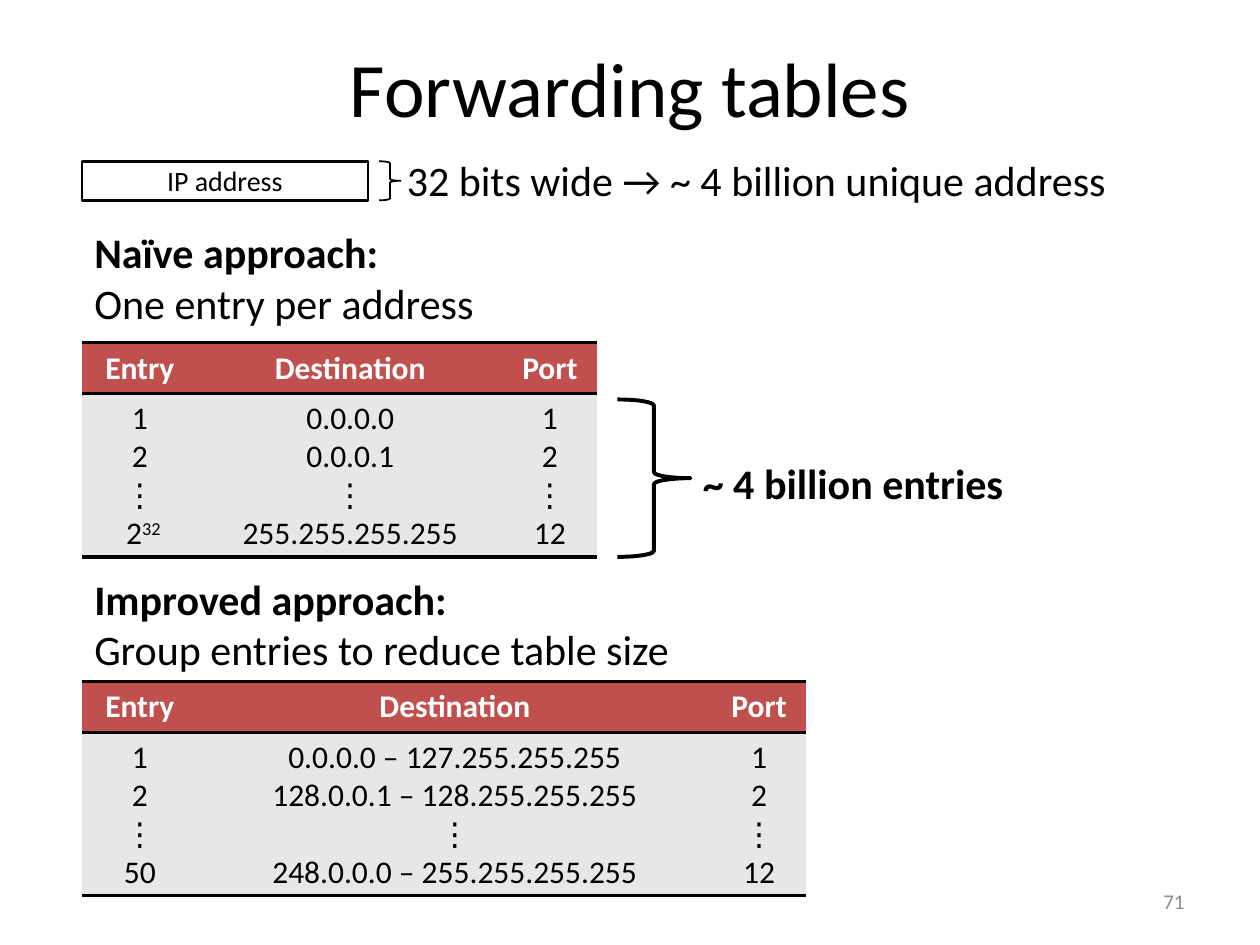
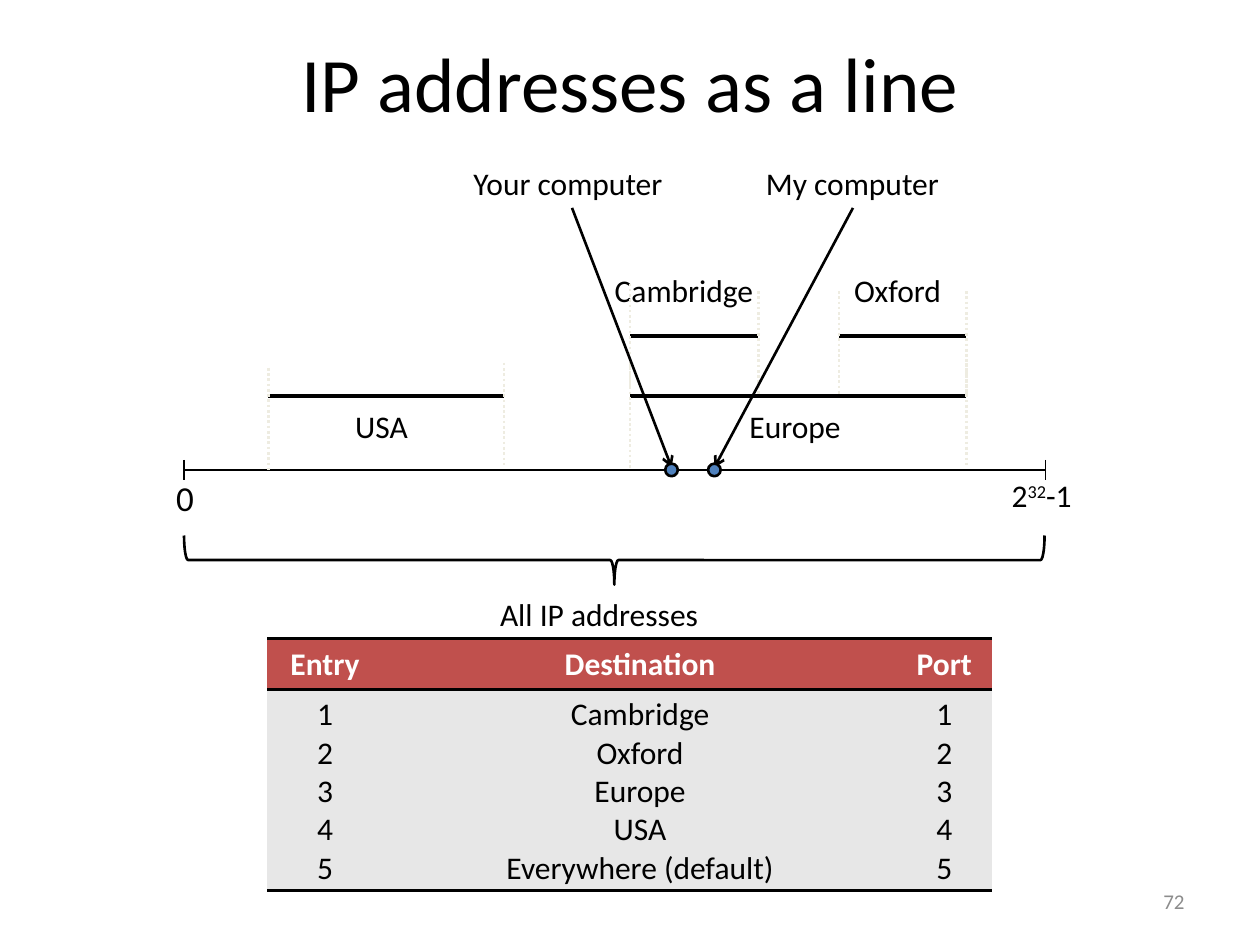
from lxml.etree import SubElement
from pptx import Presentation
from pptx.dml.color import RGBColor
from pptx.enum.dml import MSO_LINE
from pptx.enum.shapes import MSO_CONNECTOR, MSO_SHAPE
from pptx.enum.text import MSO_ANCHOR, MSO_AUTO_SIZE, PP_ALIGN
from pptx.oxml.ns import qn
from pptx.util import Emu, Pt

PX = 9144  # 100 px to the inch
FONT = "Calibri"
BLACK = RGBColor(0x00, 0x00, 0x00)
WHITE = RGBColor(0xFF, 0xFF, 0xFF)
RED = RGBColor(0xC0, 0x50, 0x4D)
PALE_GREY = RGBColor(0xE7, 0xE7, 0xE7)
NUMBER_GREY = RGBColor(0x8C, 0x8C, 0x8C)
GUIDE = RGBColor(0xEE, 0xEC, 0xE1)
BLUE = RGBColor(0x4F, 0x81, 0xBD)
PLAIN_TABLE = "{2D5ABB26-0587-4C30-8999-92F81FD0307C}"


def px(*lengths):
    return [Emu(length * PX) for length in lengths]


class Deck:
    def __init__(self):
        self.prs = Presentation()
        self.prs.slide_width, self.prs.slide_height = px(1000, 750)
        self.slide = None

    def start(self, title, top, number):
        """Begin a title-only slide with its title and page number."""
        self.slide = self.prs.slides.add_slide(self.prs.slide_layouts[5])
        heading = self.slide.shapes.title
        heading.left, heading.top, heading.width, heading.height = px(50, top, 900, 125)
        heading.text_frame.vertical_anchor = MSO_ANCHOR.MIDDLE
        self.add_text(heading.text_frame, [title], 44, align=PP_ALIGN.CENTER)
        page = self.slide.shapes.add_textbox(*px(717, 695, 233, 40)).text_frame
        page.word_wrap = True
        page.vertical_anchor = MSO_ANCHOR.MIDDLE
        self.add_text(page, [number], 12, NUMBER_GREY, align=PP_ALIGN.RIGHT)

    def add_text(self, frame, lines, size, color=BLACK, bold_lines=0, align=PP_ALIGN.LEFT):
        """Add one paragraph a line; text between ^ marks is superscript."""
        for i, line in enumerate(lines):
            para = frame.paragraphs[0] if i == 0 else frame.add_paragraph()
            para.alignment = align
            for j, part in enumerate(line.split("^")):
                if not part:
                    continue
                run = para.add_run()
                run.text = part
                run.font.name, run.font.size = FONT, Pt(size)
                run.font.bold = i < bold_lines
                run.font.color.rgb = color
                if j % 2:
                    run.font._element.set("baseline", "30000")

    def label(self, box, *lines, size=18, bold_lines=0):
        frame = self.slide.shapes.add_textbox(*px(*box)).text_frame
        frame.word_wrap = False
        frame.auto_size = MSO_AUTO_SIZE.SHAPE_TO_FIT_TEXT
        self.add_text(frame, lines, size, bold_lines=bold_lines)

    def shape(self, kind, box, weight, fill=None):
        shape = self.slide.shapes.add_shape(kind, *px(*box))
        shape.shadow.inherit = False
        shape.line.color.rgb, shape.line.width = BLACK, Pt(weight)
        if fill is None:
            shape.fill.background()
        else:
            shape.fill.solid()
            shape.fill.fore_color.rgb = fill
        return shape

    def brace(self, box, weight, rotation=0):
        brace = self.shape(MSO_SHAPE.RIGHT_BRACE, box, weight)
        brace.adjustments[0] = 0.083
        brace.rotation = rotation

    def line(self, x1, y1, x2, y2, weight, color=BLACK, dotted=False, arrow=False):
        line = self.slide.shapes.add_connector(MSO_CONNECTOR.STRAIGHT, *px(x1, y1, x2, y2))
        line.line.color.rgb, line.line.width = color, Pt(weight)
        if dotted:
            line.line.dash_style = MSO_LINE.ROUND_DOT
        if arrow:
            SubElement(line.line._get_or_add_ln(), qn("a:tailEnd"), type="arrow")
        SubElement(line._element.spPr, qn("a:effectLst"))

    def forwarding_table(self, left, top, destination_width, body_height, entries):
        """Header row over a single body row that stacks the entries."""
        widths, heights = (92, destination_width, 75), (40, body_height)
        frame = self.slide.shapes.add_table(
            2, 3, *px(left, top, sum(widths), sum(heights)))
        table = frame.table
        table.first_row = table.horz_banding = False
        table._tbl.tblPr.find(qn("a:tableStyleId")).text = PLAIN_TABLE
        for row, height in zip(table.rows, px(*heights)):
            row.height = height
        headers = ("Entry", "Destination", "Port")
        for c, (header, stacked) in enumerate(zip(headers, zip(*entries))):
            table.columns[c].width = px(widths[c])[0]
            self.cell(table.cell(0, c), [header], RED, WHITE, bold_lines=1)
            self.cell(table.cell(1, c), stacked, PALE_GREY, BLACK)

    def cell(self, cell, lines, fill, color, bold_lines=0):
        properties = cell._tc.get_or_add_tcPr()
        for side in ("a:lnT", "a:lnB"):
            border = SubElement(properties, qn(side), w=str(int(Pt(2))))
            solid = SubElement(border, qn("a:solidFill"))
            SubElement(solid, qn("a:srgbClr"), val=str(BLACK))
        cell.fill.solid()
        cell.fill.fore_color.rgb = fill
        self.add_text(cell.text_frame, lines, 18, color, bold_lines, PP_ALIGN.CENTER)

    def region(self, name, name_box, start, end, bar_y, guide_tops):
        """A named range of addresses with dotted guides at both ends."""
        self.label(name_box, name)
        self.line(start, bar_y, end, bar_y, 2.25)
        for x, top in zip((start, end), guide_tops):
            self.line(x, top, x, top + 83, 1.5, GUIDE, dotted=True)

    def computer(self, name, name_box, arrow_x, address_x):
        self.label(name_box, name)
        self.line(arrow_x, 165, address_x, 371, 1.5, arrow=True)
        self.shape(MSO_SHAPE.OVAL, (address_x - 5, 368, 10, 10), 1.5, BLUE)


def forwarding_slide(deck):
    deck.start("Forwarding tables", 6, "71")

    # Naïve approach
    deck.forwarding_table(65, 272, 242, 130, [
        ("1", "0.0.0.0", "1"),
        ("2", "0.0.0.1", "2"),
        ("⋮", "⋮", "⋮"),
        (" 2^32^", "255.255.255.255", "12"),
    ])
    deck.brace((490, 317, 58, 125), 2.25)
    deck.label((548, 358, 261, 50), "~ 4 billion entries", size=24, bold_lines=1)
    deck.label((65, 175, 325, 91), "Naïve approach:", "One entry per address",
               size=24, bold_lines=1)

    # Improved approach
    deck.label((65, 450, 484, 91), "Improved approach:",
               "Group entries to reduce table size", size=24, bold_lines=1)
    deck.forwarding_table(65, 541, 408, 130, [
        ("1", "0.0.0.0 – 127.255.255.255", "1"),
        ("2", "128.0.0.1 – 128.255.255.255", "2"),
        ("⋮", "⋮", "⋮"),
        ("50", "248.0.0.0 – 255.255.255.255", "12"),
    ])

    # Width of an address
    address = deck.shape(MSO_SHAPE.RECTANGLE, (65, 128, 227, 31), 1.5).text_frame
    address.margin_left = address.margin_right = 0
    address.vertical_anchor = MSO_ANCHOR.MIDDLE
    deck.add_text(address, ["IP address"], 16, align=PP_ALIGN.CENTER)
    deck.brace((301, 128, 17, 31), 1)
    deck.label((313, 118, 575, 50), "32 bits wide → ~ 4 billion unique address", size=24)


def address_line_slide(deck):
    deck.start("IP addresses as a line", 2, "72")

    # Line of all addresses
    first, last, axis_y = 146, 830, 373
    deck.line(first, axis_y, last, axis_y, 0.75)
    for x in (first, last):
        deck.line(x, axis_y - 8, x, axis_y + 8, 0.75)
    deck.label((130, axis_y, 34, 44), "0", size=20)
    deck.label((793, axis_y, 78, 40), "2^32^-1")

    # Table with one entry per region
    places = ("Cambridge", "Oxford", "Europe", "USA", "Everywhere (default)")
    deck.forwarding_table(212, 507, 408, 160, [
        (str(n), place, str(n)) for n, place in enumerate(places, 1)])
    deck.label((387, 467, 179, 40), "All IP addresses")
    deck.brace((468, 103, 39, 683), 1.5, rotation=90)

    # Regions
    deck.region("Europe", (585, 318, 94, 40), 500, 767, 314, (290, 288))
    deck.region("USA", (272, 318, 63, 40), 213, 400, 314, (292, 288))
    deck.region("Oxford", (668, 210, 91, 40), 666, 767, 267, (231, 231))
    deck.region("Cambridge", (478, 210, 131, 40), 500, 602, 267, (225, 231))

    # Computers
    deck.computer("Your computer", (366, 125, 174, 40), 454, 533)
    deck.computer("My computer", (598, 125, 159, 40), 677, 567)


def main():
    deck = Deck()
    forwarding_slide(deck)
    address_line_slide(deck)
    deck.prs.save("out.pptx")


if __name__ == "__main__":
    main()
